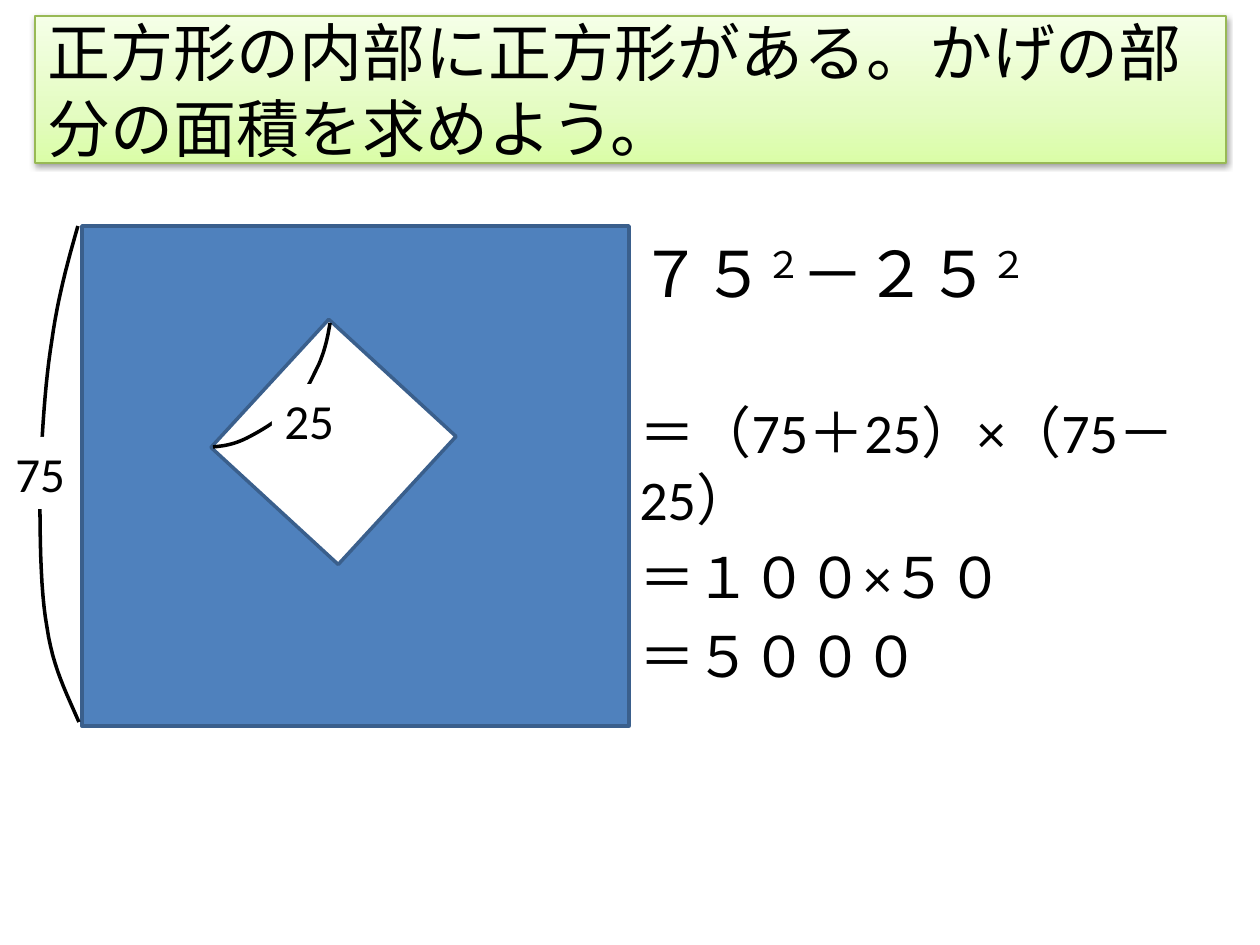
from pptx import Presentation
from pptx.dml.color import RGBColor
from pptx.enum.shapes import MSO_SHAPE
from pptx.enum.text import MSO_ANCHOR, MSO_AUTO_SIZE, PP_ALIGN
from pptx.oxml import parse_xml
from pptx.oxml.ns import nsdecls
from pptx.util import Emu, Pt

EMU_PER_PX = 914400 / 126


def px(length):
    return Emu(round(length * EMU_PER_PX))


def color(hex_string):
    return RGBColor.from_string(hex_string)


def bezier_points(start, segments, steps=12):
    """Points along a chain of cubic curves, without the start point."""
    points = []
    for c1, c2, end in segments:
        for step in range(1, steps + 1):
            t = step / steps
            weights = ((1 - t) ** 3, 3 * t * (1 - t) ** 2, 3 * t * t * (1 - t), t ** 3)
            corners = (start, c1, c2, end)
            points.append(tuple(sum(w * p[axis] for w, p in zip(weights, corners))
                                for axis in (0, 1)))
        start = end
    return points


class GeometrySlide:
    font = "Calibri"
    ink = "000000"
    paper = "FFFFFF"
    blue = "4F81BD"
    outline = "3A5F8C"

    def __init__(self, slide):
        self.slide = slide

    def add_run(self, paragraph, text, size, superscript=False):
        run = paragraph.add_run()
        run.text = text
        run.font.size = Pt(size)
        run.font.name = self.font
        run.font.color.rgb = color(self.ink)
        if superscript:
            run.font._element.set("baseline", "30000")

    def title(self, text, x, y, w, h, stops):
        title = self.slide.shapes.title
        title.left, title.top, title.width, title.height = map(px, (x, y, w, h))
        properties = title._element.spPr
        stop_xml = "".join(f'<a:gs pos="{pos * 1000}"><a:srgbClr val="{tint}"/></a:gs>'
                           for pos, tint in stops)
        properties.append(parse_xml(
            f'<a:gradFill {nsdecls("a")} rotWithShape="1"><a:gsLst>{stop_xml}</a:gsLst>'
            '<a:lin ang="16200000" scaled="0"/></a:gradFill>'))
        title.line.color.rgb = color("98B955")
        title.line.width = Pt(0.75)
        properties.append(parse_xml(
            f'<a:effectLst {nsdecls("a")}><a:outerShdw blurRad="{Pt(3.1)}" '
            f'dist="{Pt(1.6)}" dir="5400000" rotWithShape="0"><a:srgbClr val="000000">'
            '<a:alpha val="38000"/></a:srgbClr></a:outerShdw></a:effectLst>'))
        frame = title.text_frame
        frame.auto_size = MSO_AUTO_SIZE.NONE
        frame.vertical_anchor = MSO_ANCHOR.MIDDLE
        frame.paragraphs[0].alignment = PP_ALIGN.LEFT
        self.add_run(frame.paragraphs[0], text, 36)

    def square(self, x, y, w, h, fill, rotation=0):
        square = self.slide.shapes.add_shape(MSO_SHAPE.RECTANGLE, *map(px, (x, y, w, h)))
        square.shadow.inherit = False
        square.rotation = rotation
        square.fill.solid()
        square.fill.fore_color.rgb = color(fill)
        square.line.color.rgb = color(self.outline)
        square.line.width = Pt(2)

    def arc(self, start, segments):
        builder = self.slide.shapes.build_freeform(px(start[0]), px(start[1]))
        builder.add_line_segments([(px(x), px(y)) for x, y in bezier_points(start, segments)],
                                  close=False)
        arc = builder.convert_to_shape()
        arc.shadow.inherit = False
        arc.fill.background()
        arc.line.color.rgb = color(self.ink)
        arc.line.width = Pt(2)

    def side_label(self, text, x, y):
        label = self.slide.shapes.add_textbox(*map(px, (x, y, 76, 72)))
        label.fill.solid()
        label.fill.fore_color.rgb = color(self.paper)
        label.text_frame.word_wrap = False
        self.add_run(label.text_frame.paragraphs[0], text, 28)

    def working(self, lines, x, y, w, h):
        """Each line is (space before in points, size, runs)."""
        frame = self.slide.shapes.add_textbox(*map(px, (x, y, w, h))).text_frame
        frame.word_wrap = True
        for index, (space, size, runs) in enumerate(lines):
            paragraph = frame.add_paragraph() if index else frame.paragraphs[0]
            paragraph.space_before = Pt(space)
            for text, superscript in runs:
                self.add_run(paragraph, text, size, superscript)


def main():
    presentation = Presentation()
    presentation.slide_width, presentation.slide_height = px(1260), px(945)
    page = GeometrySlide(presentation.slides.add_slide(presentation.slide_layouts[5]))

    # Problem statement
    page.title("正方形の内部に正方形がある。かげの部分の面積を求めよう。", 35, 16, 1191, 147,
               [(0, "DAFDA7"), (35, "E4FCC2"), (100, "F5FFE7")])

    # Shaded square with a tilted square cut out
    page.square(82, 226, 547, 500, page.blue)
    page.square(247, 355, 173, 174, page.paper, rotation=42.6)

    # Arcs marking the side lengths, with their labels on top
    page.arc((78, 226), [((68, 261), (58, 297), (52, 340)),
                         ((45, 383), (42, 435), (40, 483)),
                         ((40, 530), (40, 588), (47, 627)),
                         ((53, 668), (67, 694), (79, 722))])
    page.arc((330, 323), [((328, 336), (325, 350), (319, 364)),
                          ((312, 378), (306, 393), (294, 406)),
                          ((282, 418), (261, 431), (247, 438)),
                          ((233, 445), (223, 446), (213, 447))])
    page.side_label("75", 3, 437)
    page.side_label("25", 272, 384)

    # Calculation
    page.working([
        (0, 36, [("７５", False), ("２", True), ("－２５", False), ("２", True)]),
        (50, 32, [("＝（75＋25）×（75－25）", False)]),
        (6.4, 32, [("＝１００×５０", False)]),
        (6.4, 32, [("＝５０００", False)]),
    ], 627, 228, 595, 435)

    presentation.save("out.pptx")


if __name__ == "__main__":
    main()
